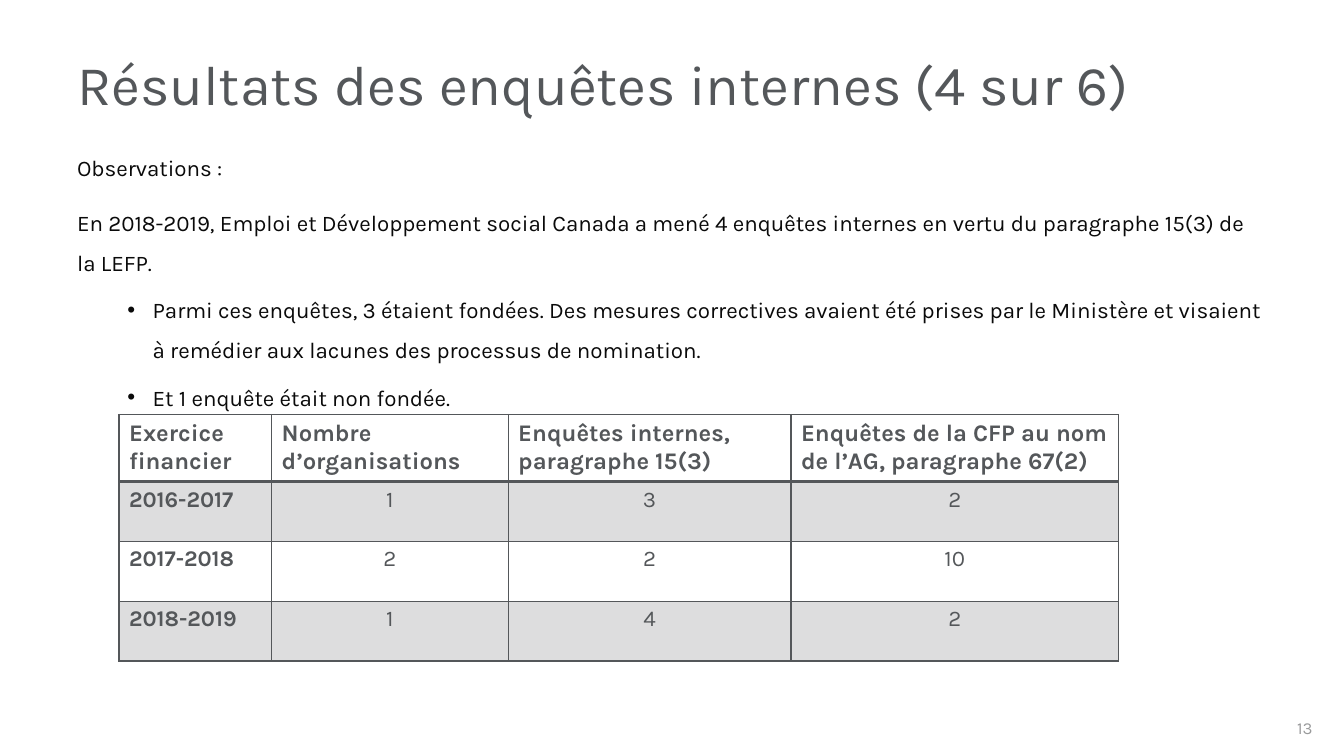
"""Build the slide on internal investigation results."""
from lxml.etree import SubElement
from pptx import Presentation
from pptx.dml.color import RGBColor
from pptx.enum.text import MSO_ANCHOR, PP_ALIGN
from pptx.oxml.ns import qn
from pptx.util import Pt

FONT = "Karla"
GREY, BLACK, PALE, BAND = "54575A", "0A0A0A", "999A9B", "DDDDDE"

TITLE = "Résultats des enquêtes internes (4 sur 6)"
PAGE = "13"
OBSERVATIONS = [
    (0, "Observations\u00a0:"),
    (0, "En 2018-2019, Emploi et Développement social Canada a mené 4 enquêtes internes "
        "en vertu du paragraphe\u00a015(3) de la LEFP."),
    (1, "Parmi ces enquêtes, 3 étaient fondées. Des mesures correctives avaient été prises "
        "par le Ministère et visaient à remédier aux lacunes des processus de nomination."),
    (1, "Et 1\u00a0enquête était non fondée."),
]
ROWS = [
    ("Exercice financier", "Nombre d’organisations", "Enquêtes internes, paragraphe 15(3)",
     "Enquêtes de la CFP au nom de l’AG, paragraphe 67(2)"),
    ("2016-2017", "1", "3", "2"),
    ("2017-2018", "2", "2", "10"),
    ("2018-2019", "1", "4", "2"),
]
COLUMN_WIDTHS = (109, 169, 202, 234)
ROW_HEIGHTS = (46.8, 42.7, 42.7, 42.7)
TABLE_LEFT, TABLE_TOP = 85, 296


def rgb(value):
    """Turn a hex string into a colour."""
    return RGBColor.from_string(value)


def add_run(p, text, size, color, bold=False):
    """Add one styled run to a paragraph."""
    r = p.add_run()
    r.text = text
    r.font.name, r.font.size, r.font.bold = FONT, Pt(size), bold
    r.font.color.rgb = rgb(color)


def add_box(s, left, top, width, height, anchor):
    """Add a wrapping text box and return its text frame."""
    tf = s.shapes.add_textbox(Pt(left), Pt(top), Pt(width), Pt(height)).text_frame
    tf.word_wrap = True
    tf.vertical_anchor = anchor
    return tf


def add_bullet(p):
    """Give a paragraph a hanging bullet."""
    pPr = p._p.get_or_add_pPr()
    pPr.set("marL", str(Pt(54)))
    pPr.set("indent", str(Pt(-18)))
    SubElement(pPr, qn("a:buFont"), typeface="Arial")
    SubElement(pPr, qn("a:buChar"), char="•")


def add_borders(cell, bottom, top):
    """Draw the four borders of a cell."""
    tcPr = cell._tc.get_or_add_tcPr()
    for side, width in (("L", 1), ("R", 1), ("T", top), ("B", bottom)):
        ln = SubElement(tcPr, qn(f"a:ln{side}"), w=str(Pt(width)))
        SubElement(SubElement(ln, qn("a:solidFill")), qn("a:srgbClr"), val=GREY)


def add_observations(s):
    """Write the introduction and its bullets."""
    tf = add_box(s, 48, 97.2, 864, 197, MSO_ANCHOR.TOP)
    for i, (level, text) in enumerate(OBSERVATIONS):
        p = tf.add_paragraph() if i else tf.paragraphs[0]
        p.line_spacing = 1.5
        if i:
            p.space_before = Pt(5 if level else 10)
        if level:
            p.level = level
            add_bullet(p)
        add_run(p, text, 16, BLACK)


def add_results(s):
    """Lay out the table of results."""
    table = s.shapes.add_table(
        len(ROWS), len(COLUMN_WIDTHS), Pt(TABLE_LEFT), Pt(TABLE_TOP),
        Pt(sum(COLUMN_WIDTHS)), Pt(sum(ROW_HEIGHTS))).table
    table.horz_banding = False
    for column, width in zip(table.columns, COLUMN_WIDTHS):
        column.width = Pt(width)
    for i, values in enumerate(ROWS):
        table.rows[i].height = Pt(ROW_HEIGHTS[i])
        for j, value in enumerate(values):
            cell = table.cell(i, j)
            add_borders(cell, 2 if i == 0 else 1, 2 if i == 1 else 1)
            if i % 2:
                cell.fill.solid()
                cell.fill.fore_color.rgb = rgb(BAND)
            else:
                cell.fill.background()
            p = cell.text_frame.paragraphs[0]
            p.alignment = PP_ALIGN.CENTER if i and j else PP_ALIGN.LEFT
            add_run(p, value, 16 if i else 17, GREY, i == 0 or j == 0)


def main():
    """Build and save the slide."""
    prs = Presentation()
    prs.slide_width, prs.slide_height = Pt(960), Pt(540)
    s = prs.slides.add_slide(prs.slide_layouts[6])
    p = add_box(s, 48, 28.8, 846, 67, MSO_ANCHOR.MIDDLE).paragraphs[0]
    p.line_spacing = 0.9
    add_run(p, TITLE, 40, GREY)
    add_observations(s)
    add_results(s)
    p = add_box(s, 850.3, 505.4, 94.3, 28.8, MSO_ANCHOR.MIDDLE).paragraphs[0]
    p.alignment = PP_ALIGN.RIGHT
    add_run(p, PAGE, 12, PALE)
    prs.save("out.pptx")


if __name__ == "__main__":
    main()
